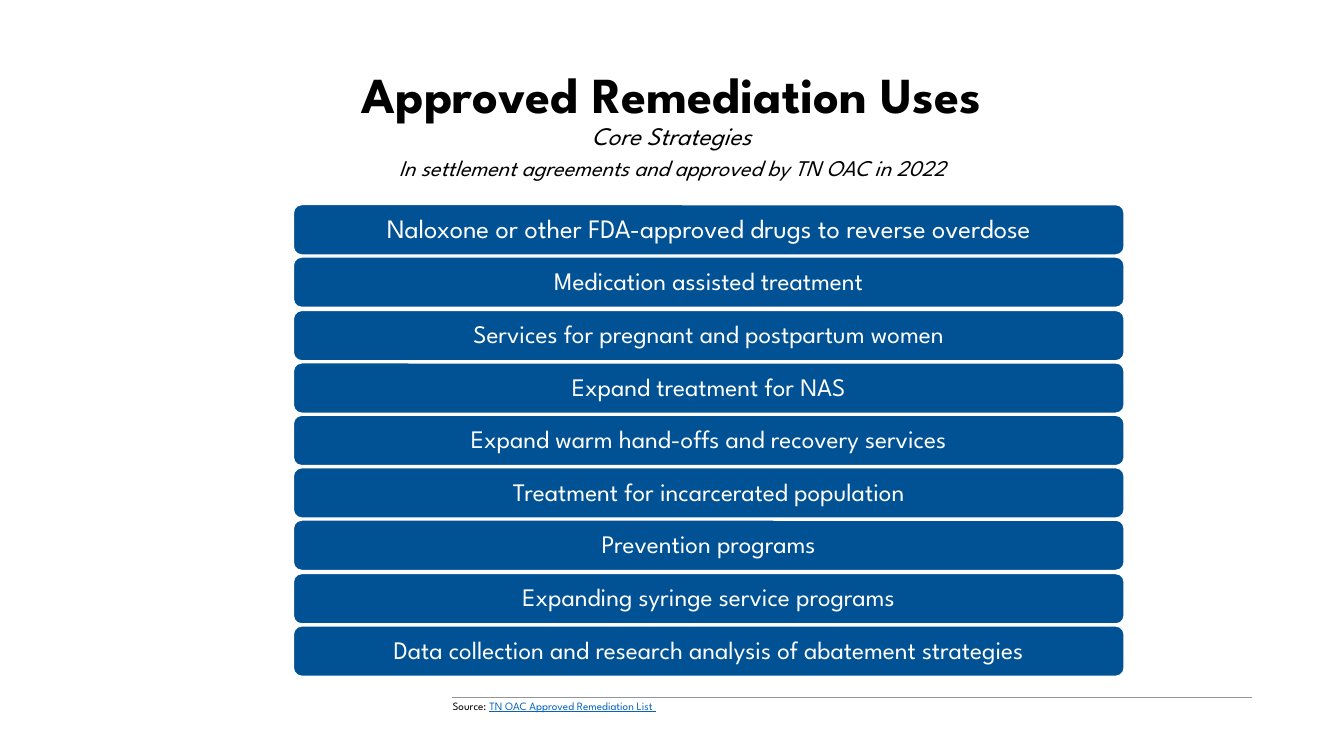
from pptx import Presentation
from pptx import util as u
from pptx.dml.color import RGBColor
from pptx.enum import shapes, text
from lxml import etree

PX = 9144  # EMU per px, 100 px to the inch
THEME = {
    "font": "League Spartan",
    "black": "000000", "white": "FFFFFF", "bar": "005295",
    "rule": "929897", "link": "0563C1",
    "title": 36, "subtitle": 18, "note": 16, "first_bar": 19, "bar_text": 18, "source": 8,
}


def add_run(paragraph, words, size, color="black", **styles):
    run = paragraph.add_run()
    run.text = words
    run.font.name = THEME["font"]
    run.font.size = u.Pt(THEME[size])
    run.font.color.rgb = RGBColor.from_string(THEME[color])
    for style, value in styles.items():
        setattr(run.font, style, value)


def add_text_box(left, top, width, height, wrap=True):
    frame = slide.shapes.add_textbox(left * PX, top * PX, width * PX, height * PX).text_frame
    frame.word_wrap = wrap
    return frame.paragraphs[0]


presentation = Presentation()
presentation.slide_width = 1333 * PX
presentation.slide_height = 750 * PX
slide = presentation.slides.add_slide(presentation.slide_layouts[6])

# Footer rule
rule = slide.shapes.add_connector(shapes.MSO_CONNECTOR.STRAIGHT, 448 * PX, 692 * PX, 1242 * PX, 692 * PX)
rule.line.color.rgb = RGBColor.from_string(THEME["rule"])
rule.line.width = u.Pt(0.75)
etree.SubElement(rule.line._get_or_add_ln().getparent(),
                 "{http://schemas.openxmlformats.org/drawingml/2006/main}effectLst")

# Title and subtitle
heading = add_text_box(184, 64, 964, 75)
heading.alignment = text.PP_ALIGN.CENTER
heading.line_spacing = 0.9
add_run(heading, "Approved Remediation Uses", "title", bold=True)
heading.add_line_break()
add_run(heading, "Core Strategies", "subtitle", italic=True)

# Strategy bars
STRATEGIES = [
    "Naloxone or other FDA-approved drugs to reverse overdose",
    "Medication assisted treatment",
    "Services for pregnant and postpartum women",
    "Expand treatment for NAS",
    "Expand warm hand-offs and recovery services",
    "Treatment for incarcerated population",
    "Prevention programs",
    "Expanding syringe service programs",
    "Data collection and research analysis of abatement strategies",
]
FIRST_TOP, LAST_TOP = 203, 621
for index, strategy in enumerate(STRATEGIES):
    top = round(FIRST_TOP + index * (LAST_TOP - FIRST_TOP) / (len(STRATEGIES) - 1))
    bar = slide.shapes.add_shape(shapes.MSO_SHAPE.ROUNDED_RECTANGLE, 291 * PX, top * PX, 824 * PX, 50 * PX)
    bar.shadow.inherit = False
    bar.fill.solid()
    bar.fill.fore_color.rgb = RGBColor.from_string(THEME["bar"])
    bar.line.color.rgb = RGBColor.from_string(THEME["white"])
    bar.line.width = u.Pt(1)
    frame = bar.text_frame
    frame.word_wrap = True
    frame.vertical_anchor = text.MSO_ANCHOR.MIDDLE
    frame.margin_top = frame.margin_bottom = 4 * PX
    paragraph = frame.paragraphs[0]
    paragraph.alignment = text.PP_ALIGN.CENTER
    paragraph.line_spacing = 0.9
    add_run(paragraph, strategy, "bar_text" if index else "first_bar", "white")

# Source line
source = add_text_box(439, 689, 262, 24, wrap=False)
add_run(source, "Source: ", "source")
add_run(source, "TN OAC Approved Remediation List ", "source", "link", underline=True)

# Note under the subtitle
note = add_text_box(219, 148, 896, 37)
note.alignment = text.PP_ALIGN.CENTER
add_run(note, "In settlement agreements and approved by TN OAC in 2022", "note", italic=True)

presentation.save("out.pptx")
